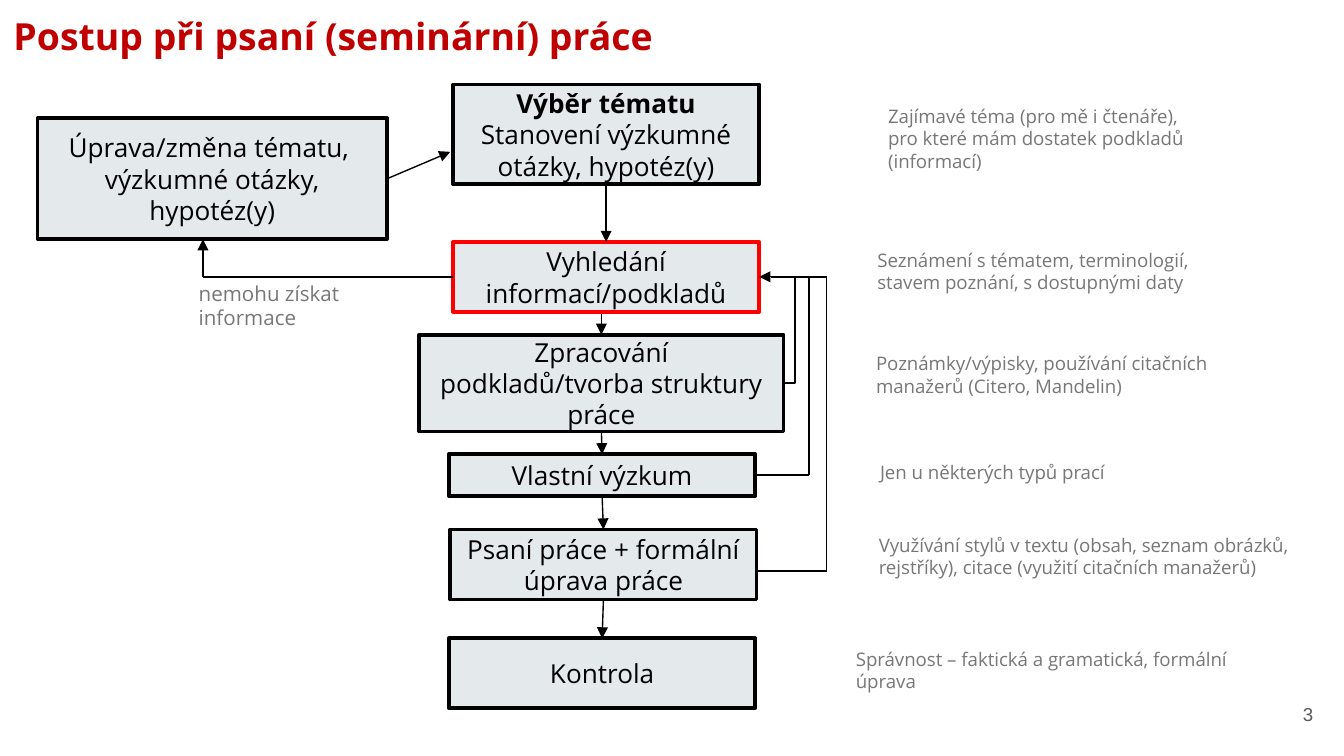
from lxml.etree import SubElement as Sub
from pptx import Presentation
from pptx.dml.color import RGBColor as Rgb
from pptx.enum.shapes import MSO_CONNECTOR as Con, MSO_SHAPE as Kind
from pptx.enum.text import MSO_ANCHOR as Anchor, PP_ALIGN as Align
from pptx.oxml.ns import qn
from pptx.util import Inches, Pt

theme = {
    "head": {"size": Pt(20), "name": "Open Sans", "bold": True, "hue": "C00000"},
    "step": {"size": Pt(14), "name": "Open Sans", "bold": False, "hue": "000000"},
    "note": {"size": Pt(10), "name": "Open Sans", "bold": False, "hue": "777777"},
    "hint": {"size": Pt(11), "name": "Open Sans", "bold": False, "hue": "777777"},
    "page": {"size": Pt(10), "name": "Arial", "bold": False, "hue": "595959"},
    "fill": "E4E9EB", "line": "000000", "mark": "FF0000",
    "edge": Pt(2), "thin": Pt(0.75),
}

deck = Presentation()
deck.slide_width = Inches(10)
deck.slide_height = deck.slide_width * 9 // 16
cell = deck.slide_width / 100
slide = deck.slides.add_slide(deck.slide_layouts[5])
shapes = slide.shapes


def write(shape, text, style, align=Align.LEFT, **frame):
    body = shape.text_frame
    for key, val in {"word_wrap": True, **frame}.items():
        setattr(body, key, val)
    para = body.paragraphs[0]
    para.text, para.alignment = text, align
    for run in para.runs:
        for key, val in theme[style].items():
            if key == "hue":
                run.font.color.rgb = Rgb.from_string(val)
            else:
                setattr(run.font, key, val)
    return para


def link(start, end, tip=True, kind=Con.STRAIGHT):
    spots = [(0, 0) if isinstance(p[0], str) else p for p in (start, end)]
    line = shapes.add_connector(kind, *(round(n * cell) for p in spots for n in p))
    for p, join in ((start, line.begin_connect), (end, line.end_connect)):
        if isinstance(p[0], str):
            join(boxes[p[0]], p[1])
    line.line.color.rgb = Rgb.from_string(theme["line"])
    line.line.width = theme["thin"]
    props = line._element.spPr
    if tip:
        Sub(props.find(qn("a:ln")), qn("a:tailEnd"), type="triangle")
    Sub(props, qn("a:effectLst"))
    return line


pad = {"margin_" + side: Inches(0.1) for side in ("left", "right", "top", "bottom")}
title = shapes.title
for key, val in {"left": 0, "top": 0, "width": 93.2, "height": 6.3}.items():
    setattr(title, key, round(val * cell))
write(title, "Postup při psaní (seminární) práce", "head",
      vertical_anchor=Anchor.TOP, **pad)

steps = {
    "topic": (33.7, 6.3, 22.8, 7.4, "Výběr tématu\nStanovení výzkumné otázky, hypotéz(y)"),
    "search": (33.7, 18, 22.8, 5.2, "Vyhledání informací/podkladů"),
    "sort": (31.2, 24.9, 27.1, 7.2, "Zpracování podkladů/tvorba struktury práce"),
    "study": (33.4, 33.8, 22.8, 3.1, "Vlastní výzkum"),
    "draft": (33.5, 39.4, 22.8, 5.2, "Psaní práce + formální úprava práce"),
    "check": (33.4, 47.5, 22.8, 5.2, "Kontrola"),
    "change": (2.8, 8.8, 26, 9, "Úprava/změna tématu, \nvýzkumné otázky, hypotéz(y)"),
}
boxes = {}
for name, (*area, text) in steps.items():
    box = shapes.add_shape(Kind.RECTANGLE, *(round(n * cell) for n in area))
    box.shadow.inherit = False
    box.fill.solid()
    box.fill.fore_color.rgb = Rgb.from_string(theme["fill"])
    box.line.color.rgb = Rgb.from_string(theme["mark" if name == "search" else "line"])
    box.line.width = theme["edge"]
    para = write(box, text, "step", Align.CENTER, vertical_anchor=Anchor.MIDDLE)
    if name == "topic":
        para.runs[0].font.bold = True
    boxes[name] = box

notes = [
    (65.1, 7.3, 30.4, 4.4, "note", "Zajímavé téma (pro mě i čtenáře), \npro které mám dostatek podkladů (informací)"),
    (64.3, 18, 30.1, 4.4, "note", "Seznámení s tématem, terminologií, stavem poznání, s dostupnými daty"),
    (64.2, 25.7, 30.4, 4.4, "note", "Poznámky/výpisky, používání citačních manažerů (Citero, Mandelin)"),
    (64.5, 33.8, 30.4, 2.7, "note", "Jen u některých typů prací"),
    (64.4, 39.2, 34.5, 4.4, "note", "Využívání stylů v textu (obsah, seznam obrázků, rejstříky), citace (využití citačních manažerů)"),
    (62.7, 47.7, 33.4, 4.4, "note", "Správnost – faktická a gramatická, formální úprava"),
    (13.8, 20.4, 17, 2.9, "hint", "nemohu získat informace"),
]
for *area, style, text in notes:
    write(shapes.add_textbox(*(round(n * cell) for n in area)), text, style)

page = shapes.add_textbox(*(round(n * cell) for n in (92.7, 51, 6, 4.3)))
write(page, "3", "page", Align.RIGHT, vertical_anchor=Anchor.MIDDLE, **pad)

chain = ["topic", "search", "sort", "study", "draft", "check"]
for upper, lower in zip(chain, chain[1:]):
    start = (44.75, 23.4) if upper == "search" else (upper, 2)
    link(start, (lower, 0))

level = 20.6
link(("search", 1), (15.1, level), tip=False)
link((15.1, level), (15.1, 17.8))
link(("change", 3), (33.5, 11.3))

bend = link(("sort", 3), ("search", 3), kind=Con.ELBOW)
geom = bend._element.spPr.find(qn("a:prstGeom"))
guide = geom.find(qn("a:avLst"))
if guide is None:
    guide = Sub(geom, qn("a:avLst"))
Sub(guide, qn("a:gd"), name="adj1", fmla="val -48100")

for start, x, y in ((("study", 3), 60.2, 35.35), ((56.3, 42.5), 61.5, 42.5)):
    link(start, (x, y), tip=False)
    link((x, y), (x, level), tip=False)
    link((57.4, level), (x, level), tip=False)

deck.save("out.pptx")
